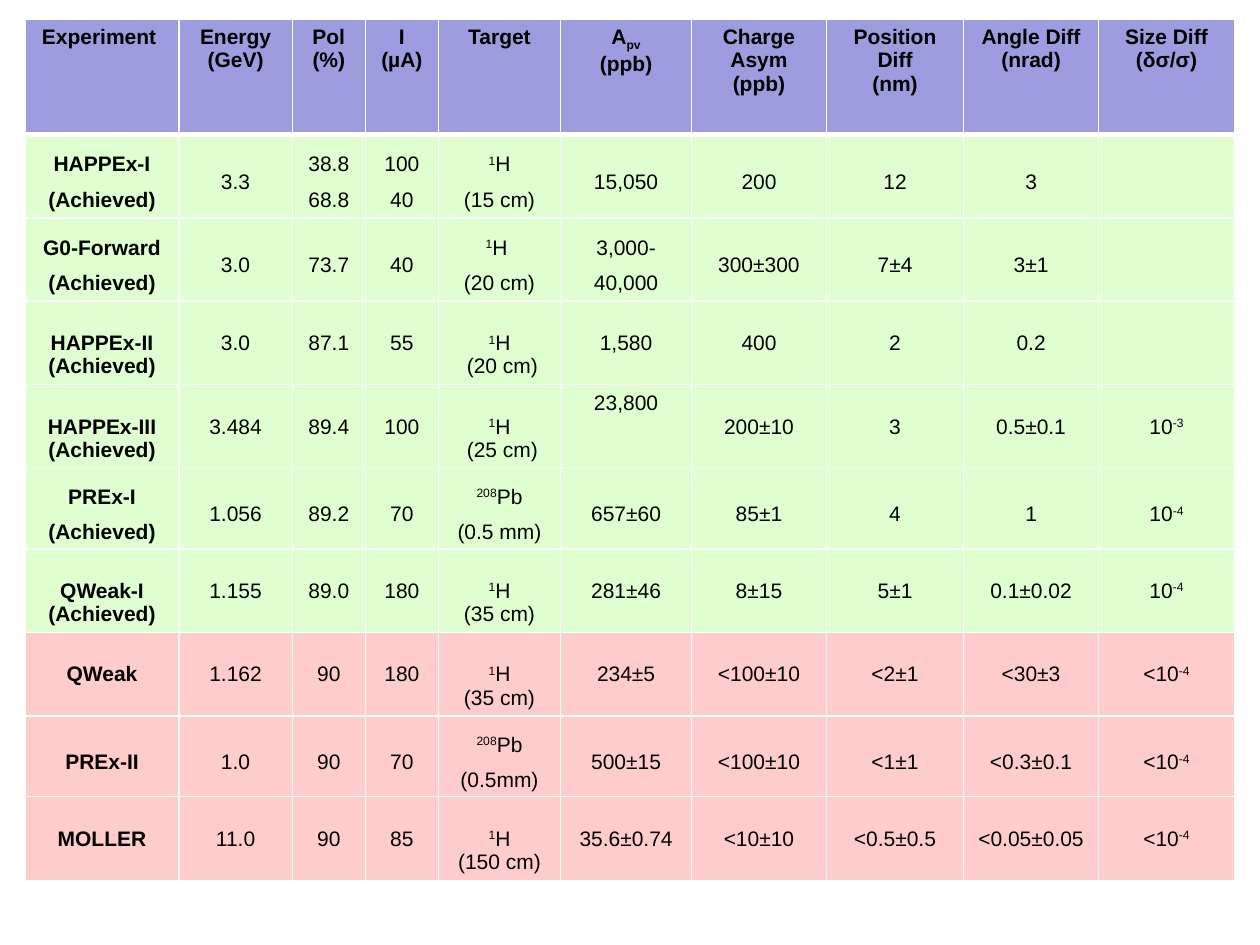
from dataclasses import dataclass

from lxml import etree
from pptx import Presentation, util as u
from pptx.dml.color import RGBColor
from pptx.enum import text as t
from pptx.oxml import ns
from pptx.table import Table, _Cell
from pptx.text.text import _Paragraph


@dataclass(frozen=True)
class Theme:
    font: str = "Arial"
    size: float = 12
    ink: str = "000000"
    border: str = "FFFFFF"
    header: str = "9C9CDF"
    achieved: str = "E0FFD1"
    planned: str = "FFCCCC"
    thin: float = 1
    thick: float = 3


@dataclass(frozen=True)
class Layout:
    """How the text of a row sits in its cells; margins in inches."""
    side: float = 0.1
    top: float = 0.05
    bottom: float = 0.05
    anchor: t.MSO_ANCHOR = t.MSO_ANCHOR.TOP
    spacing: float = 1.0


@dataclass(frozen=True)
class Row:
    """One experiment: "|" parts paragraphs, "^" encloses raised text, "_" lowered text."""
    height: float
    fill: str
    layout: Layout
    cells: tuple[str, ...]


THEME = Theme()
PLAIN = Layout()
LOWERED = Layout(top=0.24)  # leaves one line free above the text
MIDDLE = Layout(anchor=t.MSO_ANCHOR.MIDDLE, spacing=1.5)
NARROW = Layout(side=0.08, top=0.04, bottom=0.04, anchor=t.MSO_ANCHOR.MIDDLE, spacing=1.5)

SLIDE_WIDTH, SLIDE_HEIGHT = 10, 7.5
TABLE_LEFT, TABLE_TOP = 0.02 * SLIDE_WIDTH, 0.02 * SLIDE_HEIGHT
COLUMNS = (1.22, 0.9, 0.58, 0.58, 0.97, 1.04, 1.07, 1.09, 1.07, 1.08)
RAISED, LOWERED_TEXT = 30000, -25000

ROWS = (
    Row(0.92, THEME.header, PLAIN, (
        "Experiment ", "Energy|(GeV)", "Pol|(%)", "I|(µA)", "Target", "A_pv_|(ppb)",
        "Charge Asym|(ppb)", "Position Diff|(nm)", "Angle Diff|(nrad)", "Size Diff|(δσ/σ)")),
    Row(0.59, THEME.achieved, MIDDLE, (
        "HAPPEx-I (Achieved)", "3.3", "38.8|68.8", "100|40", "^1^H|(15 cm)", "15,050",
        "200", "12", "3", "")),
    Row(0.59, THEME.achieved, MIDDLE, (
        "G0-Forward (Achieved)", "3.0", "73.7", "40", "^1^H |(20 cm)", "3,000-40,000",
        "300±300", "7±4", "3±1", "")),
    Row(0.62, THEME.achieved, LOWERED, (
        "HAPPEx-II|(Achieved)", "3.0", "87.1", "55", "^1^H| (20 cm)", "1,580",
        "400", "2", "0.2", "")),
    Row(0.62, THEME.achieved, LOWERED, (
        "HAPPEx-III|(Achieved)", "3.484", "89.4", "100", "^1^H| (25 cm)", "23,800",
        "200±10", "3", "0.5±0.1", "10^-3^")),
    Row(0.58, THEME.achieved, NARROW, (
        "PREx-I (Achieved)", "1.056", "89.2", "70", "^208^Pb|(0.5 mm)", "657±60",
        "85±1", "4", "1", "10^-4^")),
    Row(0.62, THEME.achieved, LOWERED, (
        "QWeak-I|(Achieved)", "1.155", "89.0", "180", "^1^H|(35 cm)", "281±46",
        "8±15", "5±1", "0.1±0.02", "10^-4^")),
    Row(0.62, THEME.planned, LOWERED, (
        "QWeak", "1.162", "90", "180", "^1^H|(35 cm)", "234±5",
        "<100±10", "<2±1", "<30±3", "<10^-4^")),
    Row(0.58, THEME.planned, NARROW, (
        "PREx-II", "1.0", "90", "70", "^208^Pb (0.5mm)", "500±15",
        "<100±10", "<1±1", "<0.3±0.1", "<10^-4^")),
    Row(0.62, THEME.planned, LOWERED, (
        "MOLLER", "11.0", "90", "85", "^1^H|(150 cm)", "35.6±0.74",
        "<10±10", "<0.5±0.5", "<0.05±0.05", "<10^-4^")),
)
TOP_ALIGNED_CELL = (4, 5)  # the HAPPEx-III asymmetry starts at the top of its cell


def add_run(paragraph: _Paragraph, words: str, *, bold: bool, baseline: int = 0) -> None:
    run = paragraph.add_run()
    run.text = words
    run.font.name = THEME.font
    run.font.size = u.Pt(THEME.size)
    run.font.bold = bold
    run.font.color.rgb = RGBColor.from_string(THEME.ink)
    if baseline:
        run.font._element.set("baseline", str(baseline))


def write_text(cell: _Cell, words: str, *, bold: bool, spacing: float) -> None:
    for index, line in enumerate(words.split("|")):
        frame = cell.text_frame
        paragraph = frame.add_paragraph() if index else frame.paragraphs[0]
        paragraph.alignment = t.PP_ALIGN.CENTER
        paragraph.line_spacing = spacing
        mark, shift = ("_", LOWERED_TEXT) if "_" in line else ("^", RAISED)
        for position, part in enumerate(line.split(mark)):
            if part:
                add_run(paragraph, part, bold=bold, baseline=shift * (position % 2))


def set_borders(cell: _Cell, *, top: float, bottom: float) -> None:
    properties = cell._tc.get_or_add_tcPr()
    widths = {"lnL": THEME.thin, "lnR": THEME.thin, "lnT": top, "lnB": bottom}
    for side, width in widths.items():
        line = etree.SubElement(properties, ns.qn(f"a:{side}"), w=str(u.Pt(width)))
        fill = etree.SubElement(line, ns.qn("a:solidFill"))
        etree.SubElement(fill, ns.qn("a:srgbClr"), val=THEME.border)


def apply_layout(cell: _Cell, layout: Layout) -> None:
    cell.margin_left = cell.margin_right = u.Inches(layout.side)
    cell.margin_top = u.Inches(layout.top)
    cell.margin_bottom = u.Inches(layout.bottom)
    cell.vertical_anchor = layout.anchor


def fill_row(table: Table, row_index: int, row: Row) -> None:
    table.rows[row_index].height = u.Inches(row.height)
    for column_index, words in enumerate(row.cells):
        cell = table.cell(row_index, column_index)
        layout = PLAIN if (row_index, column_index) == TOP_ALIGNED_CELL else row.layout
        apply_layout(cell, layout)
        # The heavy rule lies between the header and the first experiment
        set_borders(cell, top=THEME.thick if row_index == 1 else THEME.thin,
                    bottom=THEME.thick if row_index == 0 else THEME.thin)
        cell.fill.solid()
        cell.fill.fore_color.rgb = RGBColor.from_string(row.fill)
        write_text(cell, words, bold=row_index == 0 or column_index == 0,
                   spacing=layout.spacing)


def main() -> None:
    presentation = Presentation()
    presentation.slide_width = u.Inches(SLIDE_WIDTH)
    presentation.slide_height = u.Inches(SLIDE_HEIGHT)
    slide = presentation.slides.add_slide(presentation.slide_layouts[6])

    # Table of experiments
    shape = slide.shapes.add_table(
        len(ROWS), len(COLUMNS), u.Inches(TABLE_LEFT), u.Inches(TABLE_TOP),
        u.Inches(sum(COLUMNS)), u.Inches(sum(row.height for row in ROWS)))
    table = shape.table
    table.first_row = table.horz_banding = False
    for column, width in zip(table.columns, COLUMNS):
        column.width = u.Inches(width)
    for row_index, row in enumerate(ROWS):
        fill_row(table, row_index, row)

    presentation.save("out.pptx")


if __name__ == "__main__":
    main()
